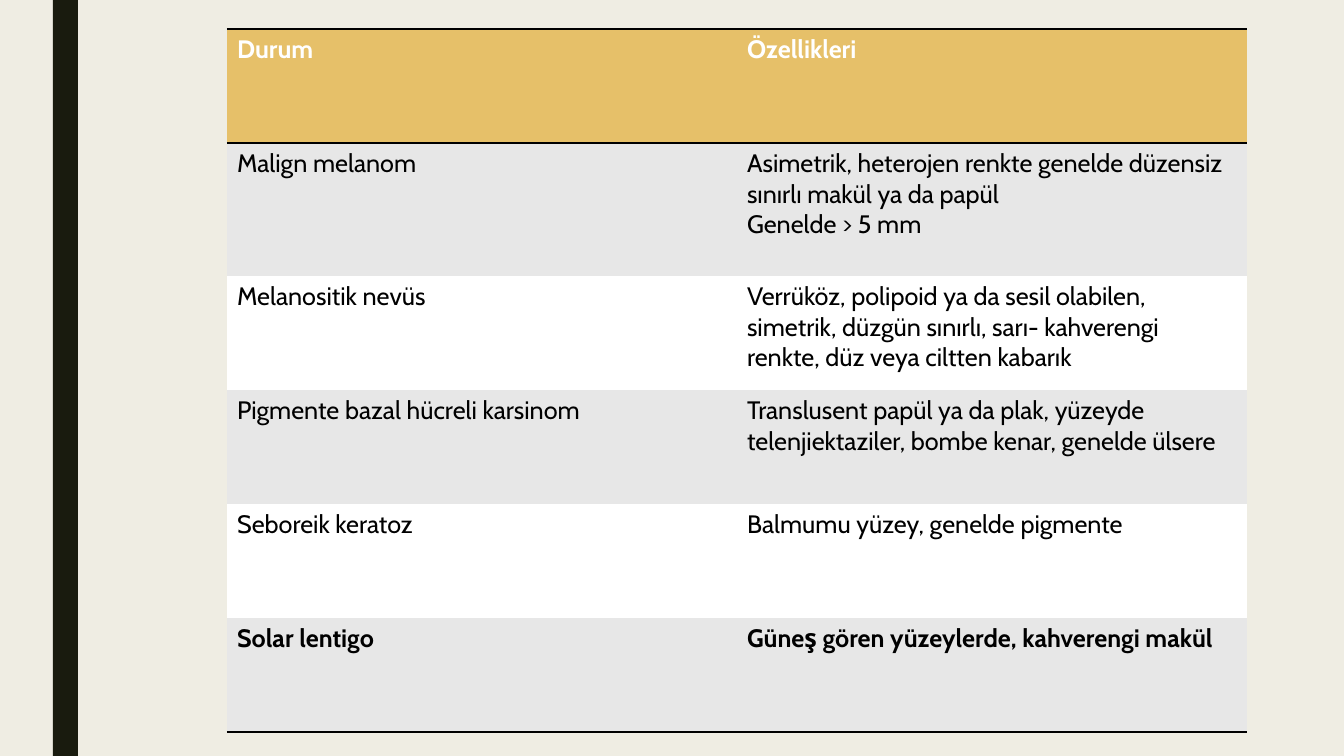
from dataclasses import dataclass

import lxml.etree
import pptx
import pptx.dml.color
import pptx.enum.shapes
import pptx.oxml.ns
import pptx.util

EMU_PER_PX = 914400 / 100.8
SLIDE_WIDTH, SLIDE_HEIGHT = 1344, 756

PAPER = pptx.dml.color.RGBColor(0xEF, 0xED, 0xE3)
DARK_BAND = pptx.dml.color.RGBColor(0x19, 0x1B, 0x0E)
GOLD = pptx.dml.color.RGBColor(0xE6, 0xC0, 0x69)
GREY = pptx.dml.color.RGBColor(0xE7, 0xE7, 0xE7)
WHITE = pptx.dml.color.RGBColor(0xFF, 0xFF, 0xFF)
BLACK = pptx.dml.color.RGBColor(0x00, 0x00, 0x00)

FONT = {"name": "Cabin", "size": pptx.util.Pt(18)}
RULE_WIDTH = pptx.util.Pt(2)
PLAIN_STYLE = "{2D5ABB26-0587-4C30-8999-92F81FD0307C}"


@dataclass(frozen=True)
class Lesion:
    condition: str
    features: str
    height: int = 114
    fill: pptx.dml.color.RGBColor = WHITE
    color: pptx.dml.color.RGBColor = BLACK
    bold: bool = False
    rules: tuple[str, ...] = ()


LESIONS = [
    Lesion("Durum", "Özellikleri", fill=GOLD, color=WHITE, bold=True, rules=("lnT", "lnB")),
    Lesion("Malign melanom",
           "Asimetrik, heterojen renkte genelde düzensiz sınırlı makül ya da papül\nGenelde > 5 mm",
           height=133, fill=GREY),
    Lesion("Melanositik nevüs",
           "Verrüköz, polipoid ya da sesil olabilen, simetrik, düzgün sınırlı, "
           "sarı- kahverengi renkte, düz veya ciltten kabarık"),
    Lesion("Pigmente bazal hücreli karsinom",
           "Translusent papül ya da plak, yüzeyde telenjiektaziler, bombe kenar, genelde ülsere",
           fill=GREY),
    Lesion("Seboreik keratoz", "Balmumu yüzey, genelde pigmente"),
    Lesion("Solar lentigo", "Güneş gören yüzeylerde, kahverengi makül",
           fill=GREY, bold=True, rules=("lnB",)),
]


def px(length: int) -> pptx.util.Emu:
    return pptx.util.Emu(round(length * EMU_PER_PX))


def add_rule(cell, edge: str) -> None:
    qn = pptx.oxml.ns.qn
    properties = cell._tc.get_or_add_tcPr()
    rule = lxml.etree.SubElement(properties, qn(f"a:{edge}"), w=str(RULE_WIDTH))
    ink = lxml.etree.SubElement(rule, qn("a:solidFill"))
    lxml.etree.SubElement(ink, qn("a:srgbClr"), val=str(BLACK))


def fill_cell(cell, text: str, lesion: Lesion) -> None:
    # Rules precede the fill in the cell properties
    for edge in lesion.rules:
        add_rule(cell, edge)
    cell.fill.solid()
    cell.fill.fore_color.rgb = lesion.fill
    cell.text = text
    for paragraph in cell.text_frame.paragraphs:
        font = paragraph.runs[0].font
        for attribute, value in {**FONT, "bold": lesion.bold}.items():
            setattr(font, attribute, value)
        font.color.rgb = lesion.color


def add_side_band(slide) -> None:
    band = slide.shapes.add_shape(
        pptx.enum.shapes.MSO_SHAPE.RECTANGLE, px(53), px(0), px(25), px(SLIDE_HEIGHT))
    band.shadow.inherit = False
    band.fill.solid()
    band.fill.fore_color.rgb = DARK_BAND
    band.line.fill.background()


def add_lesion_table(slide) -> None:
    total_height = sum(lesion.height for lesion in LESIONS)
    frame = slide.shapes.add_table(
        len(LESIONS), 2, px(227), px(29), px(1020), px(total_height))
    table = frame.table
    table.horz_banding = False
    table._tbl.tblPr.find(pptx.oxml.ns.qn("a:tableStyleId")).text = PLAIN_STYLE
    for row, lesion in zip(table.rows, LESIONS):
        row.height = px(lesion.height)
        for cell, text in zip(row.cells, (lesion.condition, lesion.features)):
            fill_cell(cell, text, lesion)


def main() -> None:
    presentation = pptx.Presentation()
    presentation.slide_width = px(SLIDE_WIDTH)
    presentation.slide_height = px(SLIDE_HEIGHT)

    # Blank layout with a paper background
    slide = presentation.slides.add_slide(presentation.slide_layouts[6])
    slide.background.fill.solid()
    slide.background.fill.fore_color.rgb = PAPER

    add_side_band(slide)
    add_lesion_table(slide)
    presentation.save("out.pptx")


if __name__ == "__main__":
    main()
